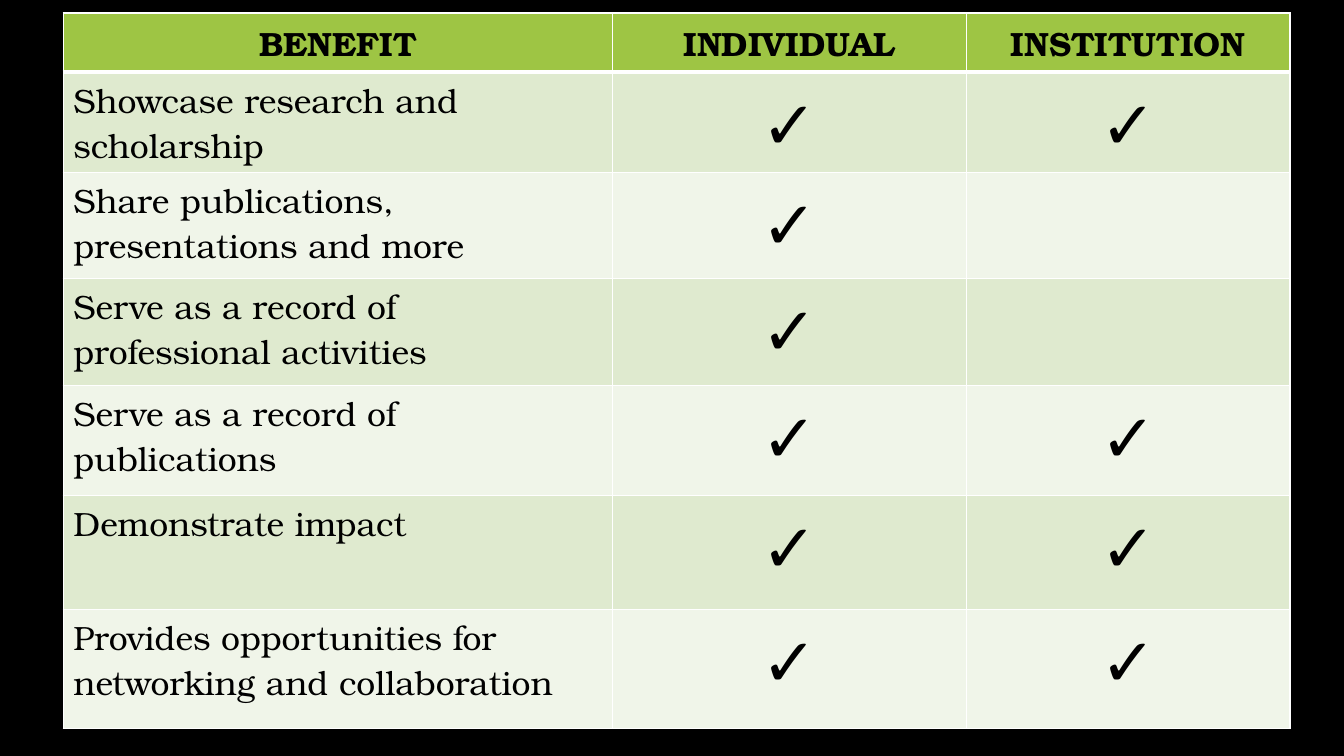
from lxml import etree
from pptx import Presentation
from pptx.dml.color import RGBColor
from pptx.enum import text
from pptx.oxml import ns
from pptx.util import Pt

FONT = "TeX Gyre Bonum"
CHECK = "✓"
HEADINGS = ["BENEFIT", "INDIVIDUAL", "INSTITUTION"]
BENEFITS = [
    ("Showcase research and scholarship", True, True),
    ("Share publications, presentations and more", True, False),
    ("Serve as a record of professional activities", True, False),
    ("Serve as a record of publications", True, True),
    ("Demonstrate impact", True, True),
    ("Provides opportunities for networking and collaboration", True, True),
]
COLUMN_WIDTHS = [392.4, 252.7, 231.2]
ROW_HEIGHTS = [42, 71.4, 76, 76.3, 78.5, 81.5, 85]
HEADER_FILL = "9EC544"
BAND_FILLS = ["F0F5E9", "DFEACF"]


def color(value):
    """Turn a hex string into a colour."""
    return RGBColor.from_string(value)


def write(frame, wording, size=24, bold=False, centered=False):
    """Put one formatted paragraph into a text frame."""
    paragraph = frame.paragraphs[0]
    paragraph.alignment = text.PP_ALIGN.CENTER if centered else text.PP_ALIGN.LEFT
    run = paragraph.add_run()
    run.text = wording
    run.font.name = FONT
    run.font.size = Pt(size)
    run.font.bold = bold
    run.font.color.rgb = color("000000")


def add_borders(cell, top=1, bottom=1):
    """Draw white lines around a table cell."""
    properties = cell._tc.get_or_add_tcPr()
    sides = {"lnL": 1, "lnR": 1, "lnT": top, "lnB": bottom}
    for position, (side, width) in enumerate(sides.items()):
        line = etree.Element(ns.qn(f"a:{side}"), w=str(Pt(width)))
        fill = etree.SubElement(line, ns.qn("a:solidFill"))
        etree.SubElement(fill, ns.qn("a:srgbClr"), val="FFFFFF")
        properties.insert(position, line)


def add_benefit_table(slide, left, top):
    """Place the comparison of benefits at the given corner."""
    check_rows = [
        [benefit] + [CHECK if held else "" for held in holders]
        for benefit, *holders in BENEFITS
    ]
    rows = [HEADINGS] + check_rows
    table = slide.shapes.add_table(
        len(rows), len(HEADINGS), Pt(left), Pt(top),
        Pt(sum(COLUMN_WIDTHS)), Pt(sum(ROW_HEIGHTS)),
    ).table
    for column, width in zip(table.columns, COLUMN_WIDTHS):
        column.width = Pt(width)
    for row, height in zip(table.rows, ROW_HEIGHTS):
        row.height = Pt(height)
    for r, row in enumerate(rows):
        for c, wording in enumerate(row):
            cell = table.cell(r, c)
            cell.fill.solid()
            cell.fill.fore_color.rgb = color(BAND_FILLS[r % 2] if r else HEADER_FILL)
            add_borders(cell, top=3 if r == 1 else 1, bottom=1 if r else 3)
            if wording:
                write(cell.text_frame, wording, size=48 if wording == CHECK else 24,
                      bold=r == 0, centered=r == 0 or c > 0)


def main():
    """Build and save the slide."""
    deck = Presentation()
    deck.slide_width, deck.slide_height = Pt(960), Pt(540)
    slide = deck.slides.add_slide(deck.slide_layouts[6])
    slide.background.fill.solid()
    slide.background.fill.fore_color.rgb = color("000000")
    add_benefit_table(slide, left=45.2, top=9.3)
    deck.save("out.pptx")


if __name__ == "__main__":
    main()
